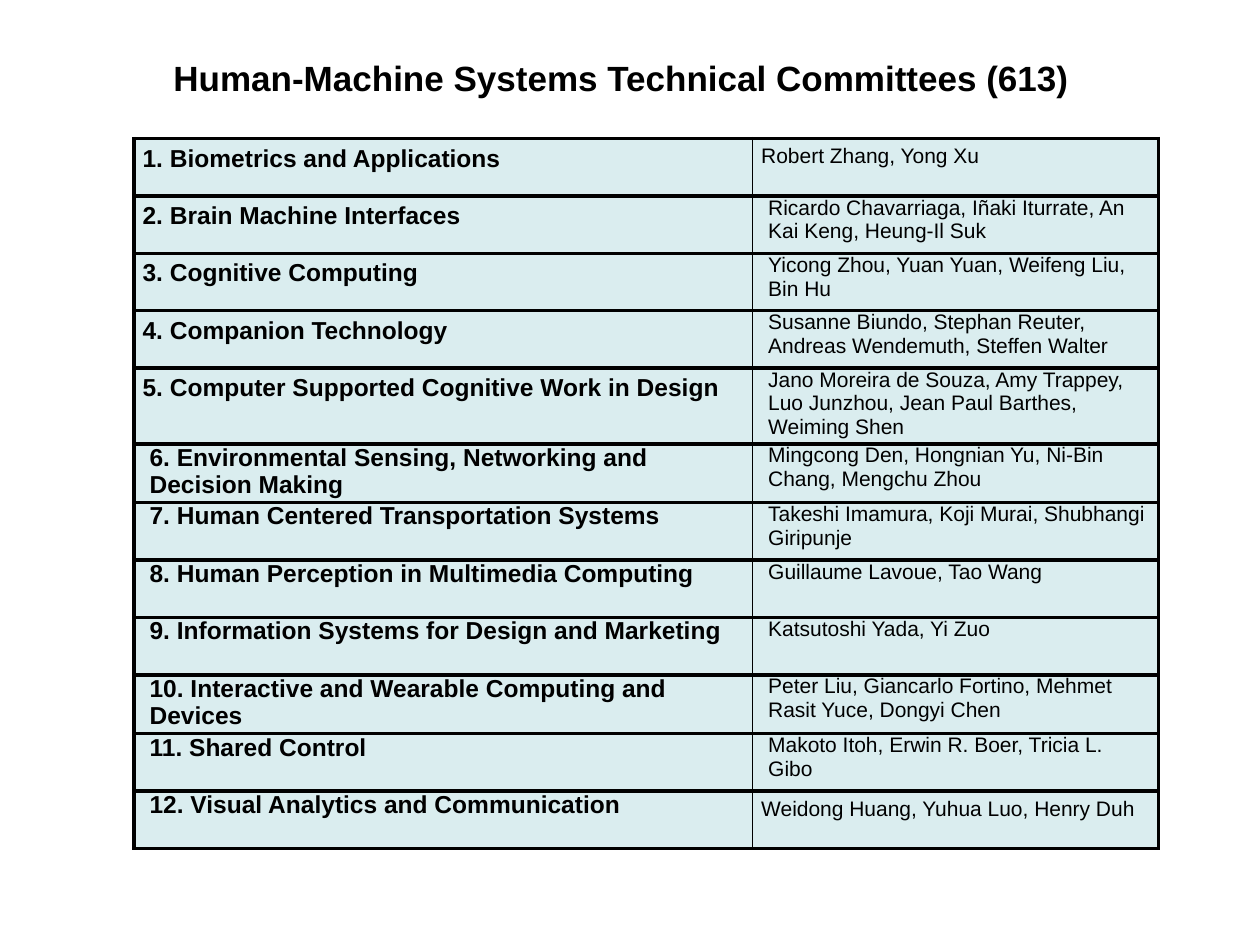
from dataclasses import dataclass

from lxml.etree import SubElement
from pptx import Presentation
from pptx.dml.color import RGBColor
from pptx.enum.text import MSO_ANCHOR, MSO_AUTO_SIZE, PP_ALIGN
from pptx.oxml.ns import qn
from pptx.util import Pt


@dataclass(frozen=True)
class Theme:
    font: str = "Arial"
    ink: str = "000000"
    cell: str = "DAEDEF"
    title_size: int = 20
    topic_size: int = 14
    member_size: int = 12
    outer_line: float = 2.25
    inner_line: float = 1


INSET = {
    "margins": {"margin_left": Pt(5), "margin_right": Pt(5), "margin_top": Pt(3.6), "margin_bottom": Pt(3.6)},
    "spacing": {"space_before": Pt(3)},
    "indent": {"marL": Pt(42), "indent": Pt(-42)},
}
FLUSH = {
    "margins": {"margin_left": Pt(3), "margin_right": Pt(3), "margin_top": 0, "margin_bottom": 0},
    "spacing": {"space_before": Pt(6), "space_after": Pt(6)},
    "indent": {"marL": Pt(6), "indent": 0},
}
PLAIN = {**INSET, "indent": {"marL": 0, "indent": 0}}

COMMITTEES = [
    ("Biometrics and Applications", INSET, "Robert Zhang, Yong Xu", PLAIN),
    ("Brain Machine Interfaces", INSET, "Ricardo Chavarriaga, Iñaki Iturrate, An Kai Keng, Heung-Il Suk", FLUSH),
    ("Cognitive Computing", INSET, "Yicong Zhou, Yuan Yuan, Weifeng Liu, Bin Hu", FLUSH),
    ("Companion Technology", INSET, "Susanne Biundo, Stephan Reuter, Andreas Wendemuth, Steffen Walter", FLUSH),
    ("Computer Supported Cognitive Work in Design", INSET,
     "Jano Moreira de Souza, Amy Trappey, Luo Junzhou, Jean Paul Barthes, Weiming Shen", FLUSH),
    ("Environmental Sensing, Networking and Decision Making", FLUSH,
     "Mingcong Den, Hongnian Yu, Ni-Bin Chang, Mengchu Zhou", FLUSH),
    ("Human Centered Transportation Systems", FLUSH, "Takeshi Imamura, Koji Murai, Shubhangi Giripunje", FLUSH),
    ("Human Perception in Multimedia Computing", FLUSH, "Guillaume Lavoue, Tao Wang", FLUSH),
    ("Information Systems for Design and Marketing", FLUSH, "Katsutoshi Yada, Yi Zuo", FLUSH),
    ("Interactive and Wearable Computing and Devices", FLUSH,
     "Peter Liu, Giancarlo Fortino, Mehmet Rasit Yuce, Dongyi Chen", FLUSH),
    ("Shared Control", FLUSH, "Makoto Itoh, Erwin R. Boer, Tricia L. Gibo", FLUSH),
    ("Visual Analytics and Communication", FLUSH, "Weidong Huang, Yuhua Luo, Henry Duh", INSET),
]


def assign(target, values):
    """Set each named attribute on the target."""
    for name, value in values.items():
        setattr(target, name, value)


class CommitteeSlide:
    """Holds the theme and the current slide."""

    def __init__(self, deck, theme):
        self.theme = theme
        self.slide = deck.slides.add_slide(deck.slide_layouts[5])

    def wording(self, paragraph, words, size, bold):
        """Put one styled run in the paragraph."""
        run = paragraph.add_run()
        run.text = words
        assign(run.font, {"name": self.theme.font, "size": Pt(size), "bold": bold})
        run.font.color.rgb = RGBColor.from_string(self.theme.ink)

    def title(self, words, left, top, width, height):
        """Place and format the title placeholder."""
        heading = self.slide.shapes.title
        assign(heading, {"left": Pt(left), "top": Pt(top), "width": Pt(width), "height": Pt(height)})
        frame = heading.text_frame
        assign(frame, {"word_wrap": True, "auto_size": MSO_AUTO_SIZE.SHAPE_TO_FIT_TEXT,
                       "vertical_anchor": MSO_ANCHOR.MIDDLE})
        assign(frame.paragraphs[0], {"alignment": PP_ALIGN.CENTER, "space_before": Pt(10)})
        self.wording(frame.paragraphs[0], words, self.theme.title_size, True)

    def borders(self, cell, left, right):
        """Draw the four cell borders, with heavy rules above and below."""
        heavy = self.theme.outer_line
        properties = cell._tc.get_or_add_tcPr()
        for side, weight in {"L": left, "R": right, "T": heavy, "B": heavy}.items():
            rule = SubElement(properties, qn(f"a:ln{side}"), w=str(int(Pt(weight))))
            SubElement(SubElement(rule, qn("a:solidFill")), qn("a:srgbClr"), val=self.theme.ink)

    def cell(self, cell, words, layout, size, bold, edges):
        """Fill one table cell."""
        self.borders(cell, *edges)
        cell.fill.solid()
        cell.fill.fore_color.rgb = RGBColor.from_string(self.theme.cell)
        assign(cell, layout["margins"])
        paragraph = cell.text_frame.paragraphs[0]
        assign(paragraph, layout["spacing"])
        for name, length in layout["indent"].items():
            paragraph._p.get_or_add_pPr().set(name, str(int(length)))
        self.wording(paragraph, words, size, bold)

    def table(self, committees, left, top, widths, row_height):
        """Build the numbered committee table."""
        theme = self.theme
        frame = self.slide.shapes.add_table(len(committees), len(widths), Pt(left), Pt(top),
                                            Pt(sum(widths)), Pt(row_height * len(committees)))
        grid = frame.table
        assign(grid, {"first_row": False, "horz_banding": False})
        for column, width in zip(grid.columns, widths):
            column.width = Pt(width)
        for index, (topic, topic_layout, members, members_layout) in enumerate(committees):
            grid.rows[index].height = Pt(row_height)
            self.cell(grid.cell(index, 0), f"{index + 1}. {topic}", topic_layout,
                      theme.topic_size, True, (theme.outer_line, theme.inner_line))
            self.cell(grid.cell(index, 1), members, members_layout,
                      theme.member_size, False, (theme.inner_line, theme.outer_line))


def main():
    """Build and save the deck."""
    deck = Presentation()
    assign(deck, {"slide_width": Pt(720), "slide_height": Pt(540)})
    committees = CommitteeSlide(deck, Theme())
    committees.title("Human-Machine Systems Technical Committees (613)", 47.5, 28.8, 615, 31.5)
    committees.table(COMMITTEES, 76.5, 79.2, (353.5, 232), 32.8)
    deck.save("out.pptx")


if __name__ == "__main__":
    main()
